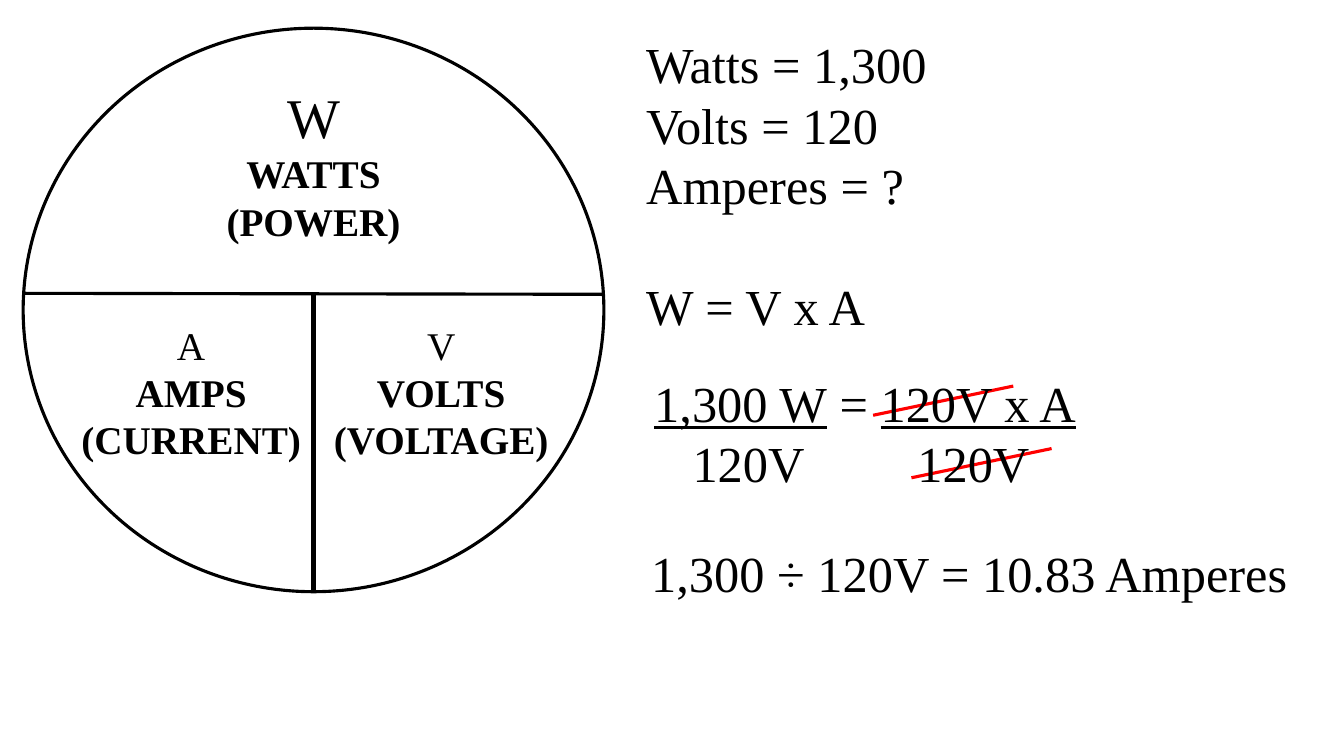
from dataclasses import dataclass
from lxml.etree import SubElement
from pptx import Presentation
from pptx.dml.color import RGBColor as RGB
from pptx.enum.shapes import MSO_CONNECTOR as Link, MSO_SHAPE as Shape
from pptx.enum.text import PP_ALIGN as Align
from pptx.oxml.ns import qn
from pptx.util import Pt


@dataclass
class Theme:
    font: str = "Times New Roman"
    ink: RGB = RGB(0, 0, 0)
    strike: RGB = RGB(255, 0, 0)
    label: int = 28
    body: int = 36
    power: int = 40


PX = 9144
theme = Theme()


def add_line(shapes, ends, color, width):
    line = shapes.add_connector(Link.STRAIGHT, *[n * PX for n in ends])
    line.line.color.rgb = color
    line.line.width = Pt(width)
    SubElement(line._element.spPr, qn("a:effectLst"))


def add_text(box, lines, align=Align.LEFT):
    frame = slide.shapes.add_textbox(*[n * PX for n in box]).text_frame
    frame.word_wrap = True
    frame.text = "\n".join(text for text, size, bold in lines)
    for para, (text, size, bold) in zip(frame.paragraphs, lines):
        para.alignment = align
        font = para.runs[0].font
        font.name, font.size, font.bold = theme.font, Pt(size), bold
        font.color.rgb = theme.ink
    return frame.paragraphs


deck = Presentation()
deck.slide_width, deck.slide_height = 1333 * PX, 750 * PX
slide = deck.slides.add_slide(deck.slide_layouts[6])

wheel = slide.shapes.add_group_shape().shapes
ring = wheel.add_shape(Shape.OVAL, 23 * PX, 28 * PX, 576 * PX, 559 * PX)
ring.shadow.inherit = False
ring.fill.background()
ring.line.color.rgb = theme.ink
ring.line.width = Pt(2.25)
add_line(wheel, (23, 291, 599, 292), theme.ink, 2.25)
add_line(wheel, (311, 292, 311, 587), theme.ink, 3)

sectors = [
    ((206, 77, 210, 172), theme.power, ("W", "WATTS", "(POWER)")),
    ((69, 314, 241, 151), theme.label, ("A", "AMPS", "(CURRENT)")),
    ((318, 314, 239, 151), theme.label, ("V", "VOLTS", "(VOLTAGE)")),
]
for box, size, (sign, unit, name) in sectors:
    lines = [(sign, size, False), (unit, theme.label, True), (name, theme.label, True)]
    add_text(box, lines, Align.CENTER)

givens = ["Watts = 1,300", "Volts = 120", "Amperes = ?", "W = V x A"]
paras = add_text((631, 28, 671, 555), [(text, theme.body, False) for text in givens])
paras[-1].space_before = Pt(43)

for left, top in ((904, 445), (866, 383)):
    add_line(slide.shapes, (left + 139, top, left, top + 29), theme.strike, 2.25)

over, under = add_text(
    (639, 364, 458, 131),
    [("1,300 W", theme.body, False), ("\t120V\t120V", theme.body, False)],
)
over.runs[0].font.underline = True
for text, lined in ((" = ", False), ("120V x A", True)):
    run = over.add_run()
    run.text = text
    font = run.font
    font.name, font.size, font.underline = theme.font, Pt(theme.body), lined
    font.color.rgb = theme.ink
tabs = SubElement(under._p.get_or_add_pPr(), qn("a:tabLst"))
for stop in (38, 261):
    SubElement(tabs, qn("a:tab"), pos=str(stop * PX), algn="l")

add_text((636, 533, 660, 71), [("1,300 ÷ 120V = 10.83 Amperes", theme.body, False)])

deck.save("out.pptx")
